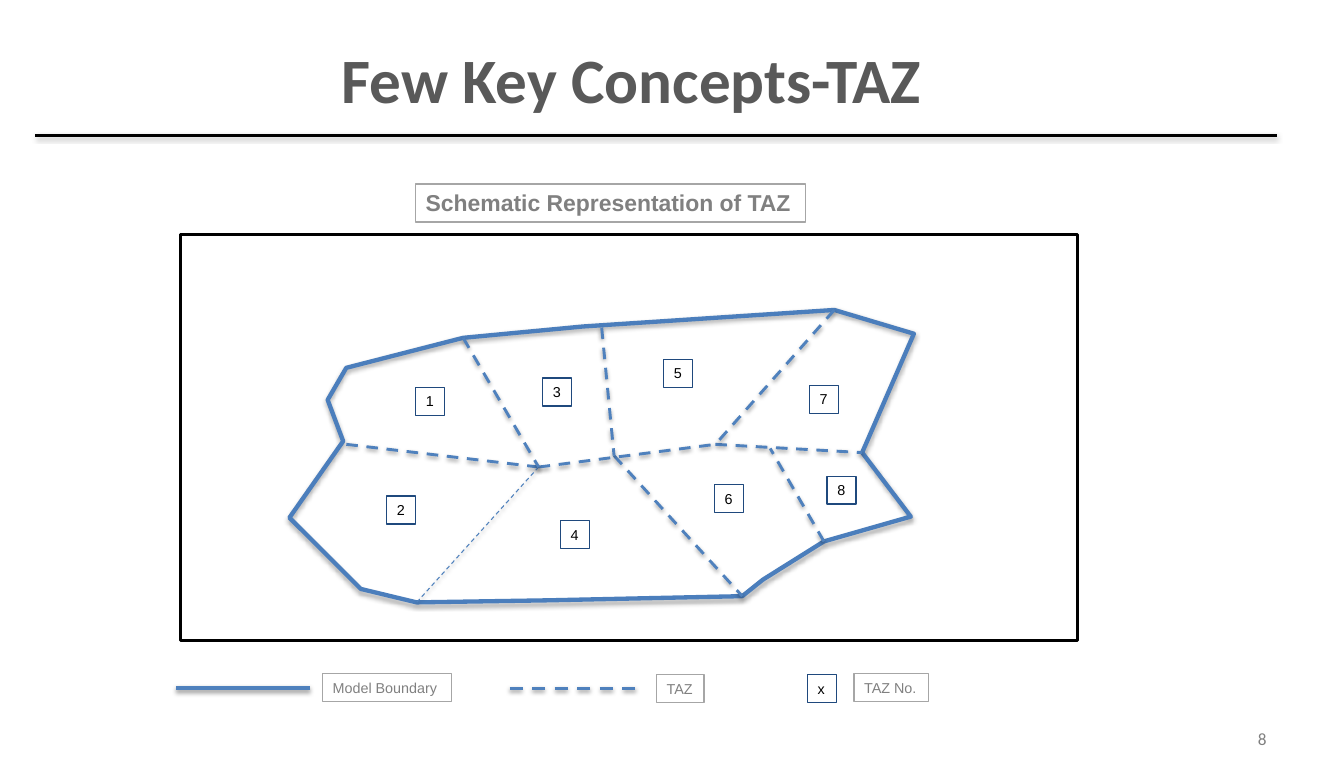
from lxml import etree
from pptx import Presentation
from pptx.dml.color import RGBColor
from pptx.enum.dml import MSO_LINE
from pptx.enum.shapes import MSO_CONNECTOR, MSO_SHAPE
from pptx.enum.text import MSO_ANCHOR, MSO_AUTO_SIZE, PP_ALIGN
from pptx.oxml import parse_xml
from pptx.oxml.ns import nsdecls
from pptx.util import Pt

EMU_PER_PX = 9144
STRAIGHT = MSO_CONNECTOR.STRAIGHT
RECTANGLE = MSO_SHAPE.RECTANGLE
DASH = MSO_LINE.DASH
TOP, MIDDLE = MSO_ANCHOR.TOP, MSO_ANCHOR.MIDDLE
LEFT, CENTER, RIGHT = PP_ALIGN.LEFT, PP_ALIGN.CENTER, PP_ALIGN.RIGHT
FIXED, GROW = MSO_AUTO_SIZE.NONE, MSO_AUTO_SIZE.SHAPE_TO_FIT_TEXT

COLORS = {
    "black": "000000",
    "white": "FFFFFF",
    "title": "595959",
    "gray": "808080",
    "label_border": "A6A6A6",
    "number_border": "1F497D",
    "boundary": "4B7EBC",
    "zone": "4F81BD",
}

BOUNDARY = [
    (280, 501), (349, 570), (403, 583), (531, 581), (718, 577), (738, 561),
    (797, 524), (881, 500), (834, 438), (884, 323), (807, 300), (564, 316),
    (448, 327), (335, 356), (317, 387), (332, 427),
]
WEST_HUB, MID_HUB, EAST_HUB = (521, 452), (594, 441), (692, 430)
ZONE_EDGES = [
    ((335, 430), WEST_HUB, 2),
    (WEST_HUB, EAST_HUB, 2),
    (EAST_HUB, (834, 438), 2),
    (WEST_HUB, (403, 583), 0.75),
    (MID_HUB, (718, 577), 2),
    ((448, 327), WEST_HUB, 2),
    ((582, 317), MID_HUB, 2),
    ((807, 300), EAST_HUB, 2),
    ((797, 524), (745, 434), 2),
]
ZONE_NUMBERS = [
    (402, 375), (374, 480), (525, 366), (542, 504),
    (642, 348), (691, 469), (783, 373), (800, 461),
]


def px(*values):
    return [value * EMU_PER_PX for value in values]


def rgb(name):
    return RGBColor.from_string(COLORS[name])


def write(shape, text, size=10, color="black", font="Arial", bold=False,
          align=LEFT, anchor=TOP, wrap=False, fit=GROW):
    frame = shape.text_frame
    frame.auto_size = fit
    frame.word_wrap = wrap
    frame.vertical_anchor = anchor
    paragraph = frame.paragraphs[0]
    paragraph.alignment = align
    run = paragraph.add_run()
    run.text = text
    run.font.size = Pt(size)
    run.font.name = font
    run.font.bold = bold
    run.font.color.rgb = rgb(color)


def outline(shape, color, width, dash=None):
    shape.line.color.rgb = rgb(color)
    shape.line.width = Pt(width)
    if dash is not None:
        shape.line.dash_style = dash


def cast_shadow(shape, opacity=38, distance=1.6):
    effects = parse_xml(f"<a:effectLst {nsdecls('a')}/>")
    namespace = etree.QName(effects).namespace
    shadow = etree.SubElement(
        effects, f"{{{namespace}}}outerShdw", blurRad=str(Pt(3.1)),
        dist=str(Pt(distance)), dir="5400000", rotWithShape="0")
    black = etree.SubElement(shadow, f"{{{namespace}}}srgbClr", val=COLORS["black"])
    etree.SubElement(black, f"{{{namespace}}}alpha", val=str(opacity * 1000))
    shape._element.spPr.append(effects)


def add_line(slide, start, end, color, width, dash=None):
    line = slide.shapes.add_connector(STRAIGHT, *px(*start, *end))
    outline(line, color, width, dash)
    cast_shadow(line)


def add_label(slide, text, box, border="label_border", color="gray", **text_format):
    label = slide.shapes.add_textbox(*px(*box))
    outline(label, border, 1)
    write(label, text, color=color, **text_format)


def add_zone_number(slide, text, left, top):
    add_label(slide, text, (left, top, 28, 27), "number_border", "black")


def add_title(slide):
    title = slide.shapes.title
    title.left, title.top, title.width, title.height = px(180, 34, 862, 116)
    write(title, "Few Key Concepts-TAZ", size=44, color="title", font="Calibri",
          bold=True, align=CENTER, wrap=True, fit=FIXED)
    add_line(slide, (34, 131), (1235, 131), "black", 2)


def add_map(slide):
    panel = slide.shapes.add_shape(RECTANGLE, *px(175, 227, 867, 393))
    panel.shadow.inherit = False
    panel.fill.solid()
    panel.fill.fore_color.rgb = rgb("white")
    outline(panel, "black", 2)

    builder = slide.shapes.build_freeform(*BOUNDARY[0], scale=EMU_PER_PX)
    builder.add_line_segments(BOUNDARY[1:], close=True)
    boundary = builder.convert_to_shape()
    boundary.fill.background()
    outline(boundary, "boundary", 3)
    cast_shadow(boundary, opacity=35, distance=1.8)

    for start, end, width in ZONE_EDGES:
        add_line(slide, start, end, "zone", width, DASH)
    for number, (left, top) in enumerate(ZONE_NUMBERS, start=1):
        add_zone_number(slide, str(number), left, top)
    add_label(slide, "Schematic Representation of TAZ", (402, 178, 377, 37),
              size=16, bold=True)


def add_legend(slide):
    add_line(slide, (170, 666), (300, 666), "zone", 3)
    add_label(slide, "Model Boundary", (312, 652, 125, 27))
    add_line(slide, (493, 666), (622, 666), "zone", 2.25, DASH)
    add_label(slide, "TAZ", (635, 653, 46, 27))
    add_zone_number(slide, "x", 781, 653)
    add_label(slide, "TAZ No.", (826, 652, 72, 27))


def add_page_number(slide):
    page_number = slide.shapes.add_textbox(*px(932, 695, 303, 40))
    write(page_number, "8", size=12, color="gray", font="Calibri",
          align=RIGHT, anchor=MIDDLE, wrap=True, fit=FIXED)


def main():
    presentation = Presentation()
    presentation.slide_width, presentation.slide_height = px(1300, 750)
    slide = presentation.slides.add_slide(presentation.slide_layouts[5])
    add_title(slide)
    add_map(slide)
    add_legend(slide)
    add_page_number(slide)
    presentation.save("out.pptx")


if __name__ == "__main__":
    main()
